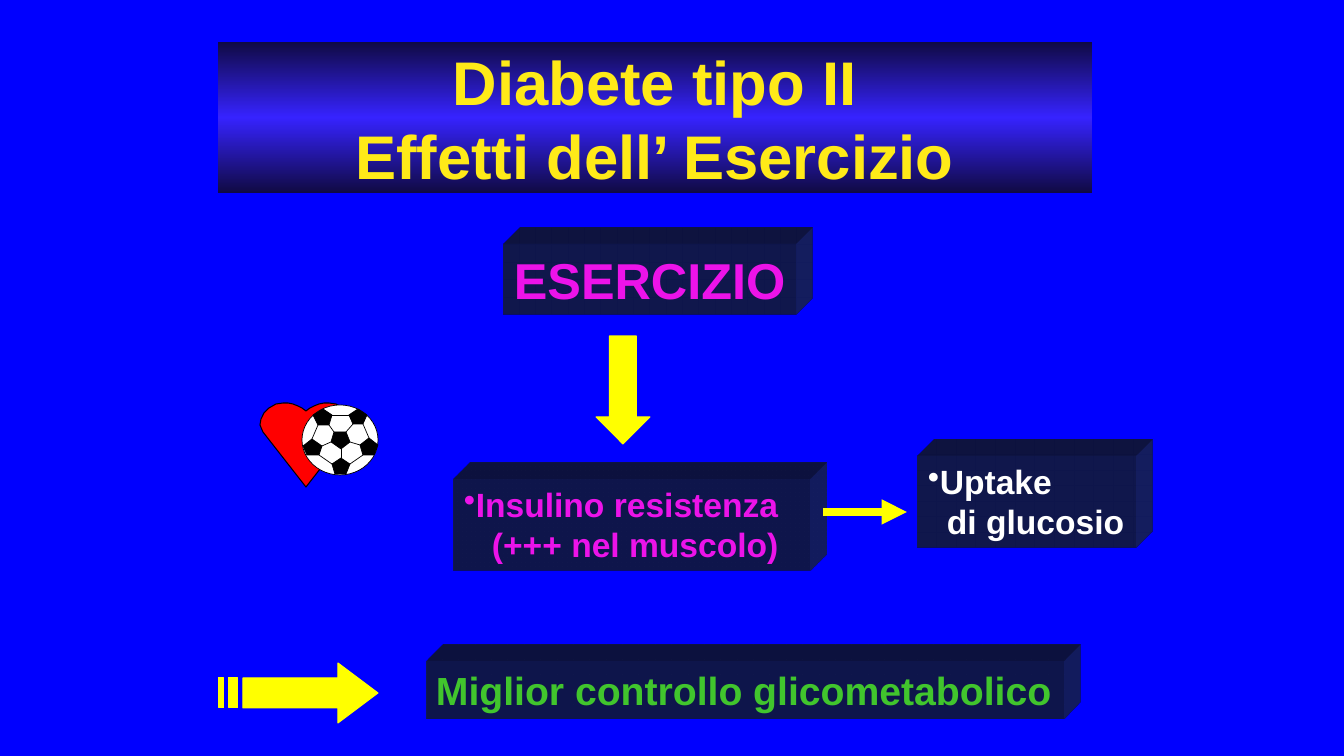
from lxml import etree
from pptx import Presentation
from pptx import util as u
from pptx.dml import color
from pptx.enum import shapes, text
from pptx.oxml import ns, parse_xml

PX = 12192000 / 1344
A = ns.nsdecls("a")
YELLOW, MAGENTA, NAVY, BLACK = "FFFF00", "EC13E9", "17216B", "000000"


def px(n):
    return u.Emu(round(n * PX))


def rgb(value):
    return color.RGBColor.from_string(value)


class Board:
    font = "Arial"

    def __init__(self, prs, background):
        self.slide = prs.slides.add_slide(prs.slide_layouts[6])
        self.shapes = self.slide.shapes
        fill = self.slide.background.fill
        fill.solid()
        fill.fore_color.rgb = rgb(background)

    def start_group(self):
        self.shapes = self.slide.shapes.add_group_shape().shapes

    def paint(self, sp, fill, line=None, width=0.75):
        sp.shadow.inherit = False
        sp.fill.solid()
        sp.fill.fore_color.rgb = rgb(fill)
        if line:
            sp.line.color.rgb = rgb(line)
            sp.line.width = u.Pt(width)
        else:
            sp.line.fill.background()
        return sp

    def shape(self, kind, box, fill, line=None, width=0.75):
        sp = self.shapes.add_shape(kind, *map(px, box))
        return self.paint(sp, fill, line, width)

    def outline(self, contours, fill, line, width=0.75):
        first, *others = contours
        builder = self.shapes.build_freeform(*first[0], scale=PX)
        builder.add_line_segments(first[1:], close=True)
        for points in others:
            builder.move_to(*points[0])
            builder.add_line_segments(points[1:], close=True)
        return self.paint(builder.convert_to_shape(), fill, line, width)

    def line(self, start, end, ink, width, arrow=False):
        c = self.shapes.add_connector(
            shapes.MSO_CONNECTOR.STRAIGHT, *map(px, start + end))
        c.line.color.rgb = rgb(ink)
        c.line.width = u.Pt(width)
        if arrow:
            ln = c.line._get_or_add_ln()
            etree.SubElement(ln, ns.qn("a:tailEnd"), type="triangle")
        etree.SubElement(c._element.spPr, ns.qn("a:effectLst"))

    def run(self, p, words, size, ink):
        r = p.add_run()
        r.text = words
        r.font.name = self.font
        r.font.size = u.Pt(size)
        r.font.bold = True
        r.font.color.rgb = rgb(ink)

    def title(self, box, lines, size, ink, edge, middle):
        sp = self.shape(shapes.MSO_SHAPE.RECTANGLE, box, edge)
        stops = "".join(
            f'<a:gs pos="{pos}"><a:srgbClr val="{tone}"/></a:gs>'
            for pos, tone in ((0, edge), (50000, middle), (100000, edge)))
        solid = sp._element.spPr.find(ns.qn("a:solidFill"))
        solid.getparent().replace(solid, parse_xml(
            f'<a:gradFill {A} rotWithShape="1"><a:gsLst>{stops}</a:gsLst>'
            '<a:lin ang="5400000" scaled="1"/></a:gradFill>'))
        tf = sp.text_frame
        tf.word_wrap = True
        tf.vertical_anchor = text.MSO_ANCHOR.MIDDLE
        p = tf.paragraphs[0]
        p.alignment = text.PP_ALIGN.CENTER
        for i, words in enumerate(lines):
            if i:
                p.add_line_break()
            self.run(p, words, size, ink)

    def block(self, box, lines, size, ink, indent=None):
        sp = self.shape(shapes.MSO_SHAPE.RECTANGLE, box, NAVY)
        spPr = sp._element.spPr
        spPr.append(parse_xml(
            f'<a:scene3d {A}><a:camera prst="legacyObliqueTopRight"/>'
            '<a:lightRig rig="legacyFlat3" dir="b"/></a:scene3d>'))
        spPr.append(parse_xml(
            f'<a:sp3d {A} extrusionH="430200" prstMaterial="legacyMatte">'
            '<a:bevelT w="13500" h="13500" prst="angle"/>'
            '<a:bevelB w="13500" h="13500" prst="angle"/>'
            f'<a:extrusionClr><a:srgbClr val="{NAVY}"/></a:extrusionClr>'
            '</a:sp3d>'))
        tf = sp.text_frame
        tf.word_wrap = False
        tf.auto_size = text.MSO_AUTO_SIZE.SHAPE_TO_FIT_TEXT
        tf.vertical_anchor = text.MSO_ANCHOR.TOP
        for i, words in enumerate(lines):
            p = tf.add_paragraph() if i else tf.paragraphs[0]
            p.alignment = text.PP_ALIGN.LEFT
            if indent:
                pPr = p._p.get_or_add_pPr()
                pPr.set("marL", str(px(indent) if i else 0))
                pPr.set("indent", "0")
                if i == 0:
                    etree.SubElement(pPr, ns.qn("a:buChar"), char="•")
            self.run(p, words, size, ink)


HALF_HEART = [(306, 411), (302, 408), (298, 406), (293, 404), (288, 403),
              (283, 403), (276, 404), (269, 408), (264, 413), (261, 419),
              (260, 425), (263, 432), (306, 487)]
PATCHES = [
    [(341, 449), (331, 442), (334, 432), (346, 432), (350, 442)],
    [(329, 425), (318, 425), (313, 415), (323, 409), (332, 415)],
    [(322, 446), (319, 455), (307, 455), (303, 446), (312, 439)],
    [(341, 458), (350, 464), (346, 474), (335, 474), (332, 464)],
    [(360, 445), (369, 438), (378, 445), (374, 455), (363, 455)],
    [(353, 424), (349, 415), (358, 409), (367, 415), (363, 424)],
]
SEAMS = [
    ((332, 415), (349, 415)), ((329, 425), (334, 432)),
    ((318, 425), (312, 439)), ((322, 446), (331, 442)),
    ((319, 455), (332, 464)), ((341, 458), (341, 449)),
    ((350, 442), (360, 445)), ((350, 464), (363, 455)),
    ((346, 432), (353, 424)), ((369, 438), (363, 424)),
]


def main():
    prs = Presentation()
    prs.slide_width, prs.slide_height = px(1344), px(756)
    s = Board(prs, "0000FF")

    s.title((218, 42, 874, 151), ["Diabete tipo II", "Effetti dell’ Esercizio"],
            44, "FFEA18", "100A43", "3623FF")
    s.block((504, 244, 292, 71), ["ESERCIZIO"], 36, MAGENTA)
    s.block((454, 479, 356, 92), ["Insulino resistenza", "(+++ nel muscolo)"],
            24, MAGENTA, indent=28)
    s.shape(shapes.MSO_SHAPE.DOWN_ARROW, (596, 336, 54, 108), YELLOW, YELLOW)

    head = [(338, 663), (338, 678), (243, 678), (243, 708),
            (338, 708), (338, 723), (378, 693)]
    stripes = [[(left, 678), (left, 708), (right, 708), (right, 678)]
               for left, right in ((229, 238), (219, 224))]
    s.outline([head] + stripes, YELLOW, YELLOW)

    s.block((426, 661, 638, 58), ["Miglior controllo glicometabolico"],
            28, "41C52D")
    s.line((823, 512), (907, 512), YELLOW, 6, arrow=True)
    s.block((918, 456, 218, 92), ["Uptake", "di glucosio"],
            24, "FFFFFF", indent=19)

    s.start_group()
    mirrored = [(612 - x, y) for x, y in HALF_HEART[-2:0:-1]]
    s.outline([HALF_HEART + mirrored], "FF0000", BLACK)
    s.shape(shapes.MSO_SHAPE.OVAL, (302, 405, 76, 70), "FFFFFF", BLACK, 0.5)
    for patch in PATCHES:
        s.outline([patch], BLACK, BLACK, 0.5)
    for start, end in SEAMS:
        s.line(start, end, BLACK, 0.5)

    prs.save("out.pptx")


if __name__ == "__main__":
    main()
